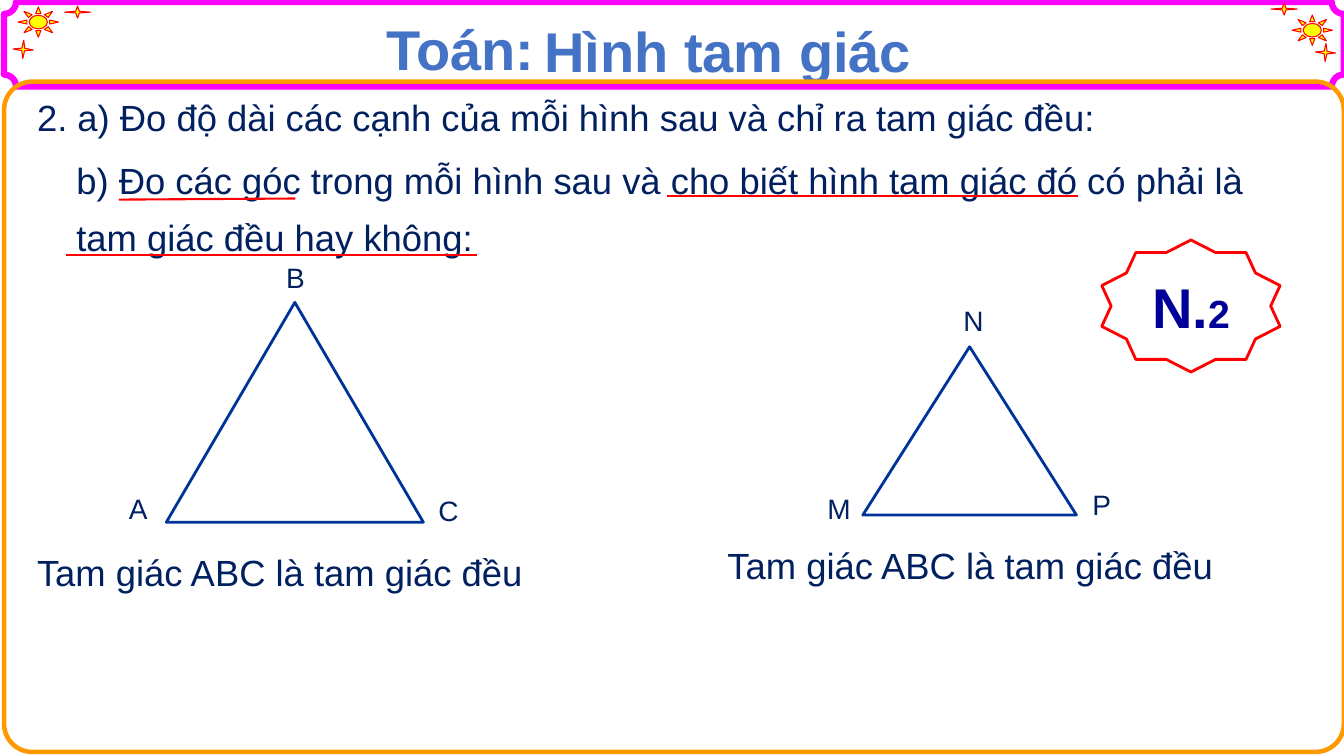
from lxml import etree
from pptx import Presentation
from pptx.dml.color import RGBColor
from pptx.enum.shapes import MSO_CONNECTOR, MSO_SHAPE
from pptx.enum.text import MSO_ANCHOR, MSO_AUTO_SIZE, PP_ALIGN
from pptx.oxml.ns import qn
from pptx.util import Pt

CENTER, LEFT = PP_ALIGN.CENTER, PP_ALIGN.LEFT
TOP, MIDDLE = MSO_ANCHOR.TOP, MSO_ANCHOR.MIDDLE
NO_FIT = MSO_AUTO_SIZE.NONE
STRAIGHT = MSO_CONNECTOR.STRAIGHT
PLAQUE, ROUNDED = MSO_SHAPE.PLAQUE, MSO_SHAPE.ROUNDED_RECTANGLE
STAR, SUN = MSO_SHAPE.STAR_4_POINT, MSO_SHAPE.SUN
BADGE, TRIANGLE = MSO_SHAPE.STAR_10_POINT, MSO_SHAPE.ISOSCELES_TRIANGLE

WHITE = RGBColor(0xFF, 0xFF, 0xFF)
MAGENTA = RGBColor(0xFF, 0x00, 0xFF)
ORANGE = RGBColor(0xFF, 0x99, 0x00)
YELLOW = RGBColor(0xFF, 0xFF, 0x00)
RED = RGBColor(0xFF, 0x00, 0x00)
TITLE_BLUE = RGBColor(0x44, 0x72, 0xC4)
NAVY = RGBColor(0x00, 0x20, 0x60)
BADGE_BLUE = RGBColor(0x00, 0x00, 0x99)
TRIANGLE_BLUE = RGBColor(0x00, 0x33, 0x99)

# Content: boxes are left, top, width, height in points
SUBJECT = ("Toán:", (266.4, 7.2, 124.6, 55.4))
LESSON = ("Hình tam giác", (380.2, 7.9, 279.4, 55.4))
ANSWER = "Tam giác ABC là tam giác đều"
BODY = [  # text, box, wraps
    ("2. a) Đo độ dài các cạnh của mỗi hình sau và chỉ ra tam giác đều:",
     (19.4, 54.7, 779, 48.2), False),
    ("b) Đo các góc trong mỗi hình sau và cho biết hình tam giác đó có phải là "
     "tam giác đều hay không:", (47.5, 100, 880, 89.3), True),
    (ANSWER, (19.4, 380.2, 377.3, 48.2), False),
    (ANSWER, (512.6, 375.1, 377.3, 48.2), False),
]
BADGE_PARTS = [("N.", 40), ("2", 28)]
BADGE_BOX = (787, 171.4, 127.4, 94.3)
FRAMES = [  # shape, box, corner, colour, line width
    (PLAQUE, (2.9, 1.4, 957, 60.5), 0.142, MAGENTA, 4.5),
    (ROUNDED, (2.9, 58.3, 957, 478.8), 0.042, ORANGE, 3.25),
]
ORNAMENTS = {  # shape, width, height, adjustment, rotation
    "long star": (STAR, 8.6, 18.7, 0.1, 270),
    "small star": (STAR, 14.4, 13, 0.1, 183),
    "sun": (SUN, 28.8, 21.6, 0.274, 0),
}
CORNERS = [
    {"long star": (913, -2.9), "small star": (939.6, 31), "sun": (923, 10.8)},
    {"long star": (51.1, -0.7), "small star": (9.4, 28.8), "sun": (13, 5)},
]
UNDERLINES = [  # from x, y to x, y
    (85, 142.6, 211, 141.8),
    (476.6, 139.7, 769.7, 139.7),
    (47.5, 182.2, 340.6, 182.2),
]
TRIANGLES = [  # box, corner letters with left and top, letter background
    ((118.8, 216, 183.6, 157),
     {"B": (197.3, 182.9), "A": (85, 347.8), "C": (306, 349.2)}, WHITE),
    ((616.3, 247.7, 152.6, 120.2),
     {"N": (681.1, 213.1), "M": (583.9, 347.8), "P": (773.3, 344.9)}, None),
]
LETTER_SIZE = (26.6, 31.7)


def points(values):
    return [Pt(value) for value in values]


def add_outline(parent, kind, box, line, width, fill=None):
    shape = parent.add_shape(kind, *points(box))
    shape.shadow.inherit = False
    if fill is None:
        shape.fill.background()
    else:
        shape.fill.solid()
        shape.fill.fore_color.rgb = fill
    shape.line.color.rgb = line
    shape.line.width = Pt(width)
    return shape


def style(run, size, color, bold=False):
    run.font.name = "Arial"
    run.font.size = Pt(size)
    run.font.color.rgb = color
    run.font.bold = bold


def write(shape, text, size, color, wrap=False, align=LEFT, bold=False, spacing=1.0):
    frame = shape.text_frame
    frame.text = text
    frame.word_wrap = wrap
    frame.auto_size = NO_FIT
    frame.vertical_anchor = TOP
    paragraph = frame.paragraphs[0]
    paragraph.alignment = align
    paragraph.line_spacing = spacing
    style(paragraph.runs[0], size, color, bold)


def write_heading(shape, text):
    write(shape, text, 40, TITLE_BLUE, align=CENTER, bold=True)
    # Thin white edge around the letters
    properties = shape.text_frame.paragraphs[0].runs[0]._r.get_or_add_rPr()
    edge = etree.Element(qn("a:ln"), w=str(Pt(0.75)))
    fill = etree.SubElement(edge, qn("a:solidFill"))
    etree.SubElement(fill, qn("a:srgbClr"), val=str(WHITE))
    properties.insert(0, edge)


deck = Presentation()
deck.slide_width, deck.slide_height = Pt(960), Pt(540)
slide = deck.slides.add_slide(deck.slide_layouts[5])
shapes = slide.shapes

# Frames and corner ornaments
for kind, box, corner, color, width in FRAMES:
    add_outline(shapes, kind, box, color, width).adjustments[0] = corner
for corner_places in CORNERS:
    for ornament_name, place in corner_places.items():
        kind, width, height, adjustment, rotation = ORNAMENTS[ornament_name]
        ornament = add_outline(shapes, kind, (*place, width, height), RED, 0.75, YELLOW)
        ornament.adjustments[0] = adjustment
        ornament.rotation = rotation

# Heading
lesson_text, lesson_box = LESSON
lesson = shapes.title
lesson.left, lesson.top, lesson.width, lesson.height = points(lesson_box)
write_heading(lesson, lesson_text)
subject_text, subject_box = SUBJECT
write_heading(shapes.add_textbox(*points(subject_box)), subject_text)

# Exercise and answers
for text, box, wraps in BODY:
    write(shapes.add_textbox(*points(box)), text, 26, NAVY, wraps, spacing=1.3)

# Red underlines
for ends in UNDERLINES:
    underline = shapes.add_connector(STRAIGHT, *points(ends))
    underline.line.color.rgb = RED
    underline.line.width = Pt(1.5)
    etree.SubElement(underline._element.spPr, qn("a:effectLst"))

# Exercise badge
badge = add_outline(shapes, BADGE, BADGE_BOX, RED, 2, WHITE)
badge.text_frame.vertical_anchor = MIDDLE
badge_line = badge.text_frame.paragraphs[0]
badge_line.alignment = CENTER
for text, size in BADGE_PARTS:
    part = badge_line.add_run()
    part.text = text
    style(part, size, BADGE_BLUE, bold=True)

# Triangles with corner letters
for box, letters, background in TRIANGLES:
    figure = shapes.add_group_shape().shapes
    add_outline(figure, TRIANGLE, box, TRIANGLE_BLUE, 2, WHITE)
    for letter, place in letters.items():
        label = figure.add_textbox(*points((*place, *LETTER_SIZE)))
        write(label, letter, 20, NAVY, wrap=True)
        if background is not None:
            label.fill.solid()
            label.fill.fore_color.rgb = background

deck.save("out.pptx")
